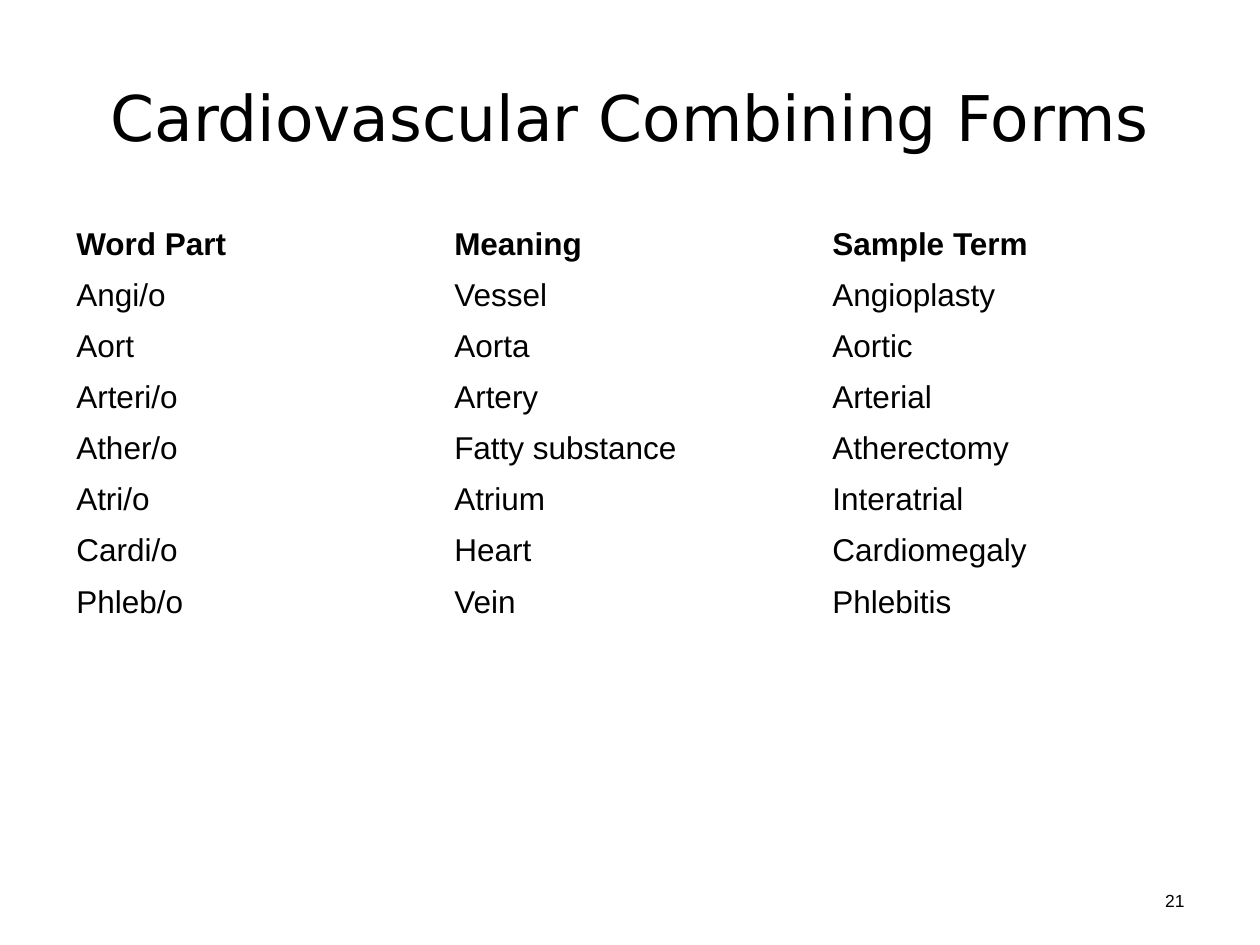
from dataclasses import dataclass
from typing import NamedTuple

from pptx import Presentation
from pptx.dml.color import RGBColor
from pptx.enum.text import MSO_ANCHOR, PP_ALIGN
from pptx.slide import Slide
from pptx.text.text import TextFrame
from pptx.util import Pt


@dataclass(frozen=True)
class Theme:
    title_font: str = "DejaVu Sans"
    body_font: str = "Arial"
    title_size: float = 36
    table_size: float = 18
    number_size: float = 10
    ink: RGBColor = RGBColor(0, 0, 0)
    paper: RGBColor = RGBColor(255, 255, 255)


class Box(NamedTuple):
    left: float
    top: float
    width: float
    height: float


class CombiningForm(NamedTuple):
    word_part: str
    meaning: str
    sample_term: str


THEME = Theme()
TITLE_BOX = Box(36, 21.6, 648, 90)
TABLE_BOX = Box(36, 126, 648, 233.6)
NUMBER_BOX = Box(643.7, 493.2, 40.3, 43.2)

HEADER = CombiningForm("Word Part", "Meaning", "Sample Term")
FORMS = [
    CombiningForm("Angi/o", "Vessel", "Angioplasty"),
    CombiningForm("Aort", "Aorta", "Aortic"),
    CombiningForm("Arteri/o", "Artery", "Arterial"),
    CombiningForm("Ather/o", "Fatty substance", "Atherectomy"),
    CombiningForm("Atri/o", "Atrium", "Interatrial"),
    CombiningForm("Cardi/o", "Heart", "Cardiomegaly"),
    CombiningForm("Phleb/o", "Vein", "Phlebitis"),
]


def set_text(tf: TextFrame, text: str, font: str, size: float,
             align: PP_ALIGN = PP_ALIGN.LEFT, bold: bool = False) -> None:
    tf.text = text
    p = tf.paragraphs[0]
    p.alignment = align
    r = p.runs[0]
    r.font.name = font
    r.font.size = Pt(size)
    r.font.bold = bold
    r.font.color.rgb = THEME.ink


def add_title(s: Slide, text: str, box: Box) -> None:
    sp = s.shapes.title
    sp.left, sp.top, sp.width, sp.height = map(Pt, box)
    tf = sp.text_frame
    tf.word_wrap = True
    tf.vertical_anchor = MSO_ANCHOR.MIDDLE
    set_text(tf, text, THEME.title_font, THEME.title_size, PP_ALIGN.CENTER)


def add_forms_table(s: Slide, rows: list[CombiningForm], box: Box) -> None:
    table = s.shapes.add_table(len(rows), len(HEADER), *map(Pt, box)).table
    table.first_row = table.horz_banding = False
    for row, form in zip(table.rows, rows):
        row.height = Pt(box.height / len(rows))
        for cell, text in zip(row.cells, form):
            cell.fill.background()
            cell.margin_left = cell.margin_right = Pt(7.6)
            cell.margin_top = cell.margin_bottom = Pt(3.6)
            set_text(cell.text_frame, text, THEME.body_font,
                     THEME.table_size, bold=form is HEADER)


def add_slide_number(s: Slide, text: str, box: Box) -> None:
    tf = s.shapes.add_textbox(*map(Pt, box)).text_frame
    tf.word_wrap = True
    tf.vertical_anchor = MSO_ANCHOR.MIDDLE
    set_text(tf, text, THEME.body_font, THEME.number_size, PP_ALIGN.RIGHT)


def main() -> None:
    prs = Presentation()
    prs.slide_width, prs.slide_height = Pt(720), Pt(540)
    s = prs.slides.add_slide(prs.slide_layouts.get_by_name("Title Only"))
    s.background.fill.solid()
    s.background.fill.fore_color.rgb = THEME.paper
    add_title(s, "Cardiovascular Combining Forms", TITLE_BOX)
    add_forms_table(s, [HEADER, *FORMS], TABLE_BOX)
    add_slide_number(s, "21", NUMBER_BOX)
    prs.save("out.pptx")


if __name__ == "__main__":
    main()
